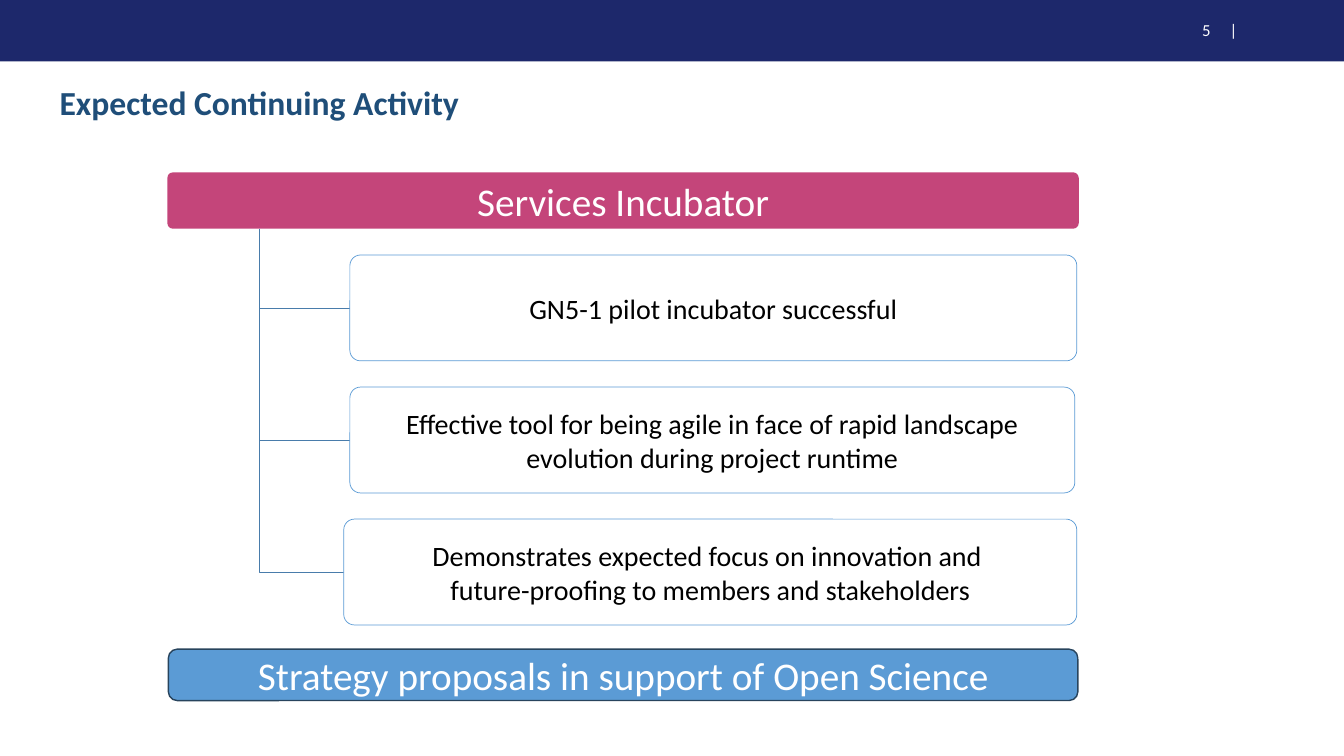
from lxml import etree
from pptx import Presentation
from pptx.dml.color import RGBColor
from pptx.enum import shapes, text
from pptx.oxml import ns
from pptx.util import Inches, Pt

NAVY = RGBColor(0x1D, 0x28, 0x6B)
TITLE_BLUE = RGBColor(0x1F, 0x4E, 0x79)
PINK = RGBColor(0xC4, 0x45, 0x7A)
BLUE = RGBColor(0x5B, 0x9B, 0xD5)
BRANCH_BLUE = RGBColor(0x49, 0x7C, 0xAB)
DARK_BLUE = RGBColor(0x28, 0x44, 0x5D)
WHITE = RGBColor(0xFF, 0xFF, 0xFF)
BLACK = RGBColor(0, 0, 0)

TRUNK_X, TRUNK_TOP = 2.57, 2.27
CARD_TOP, CARD_HEIGHT, CARD_STEP = 2.53, 1.05, 1.31
CARDS = [
    (3.47, 7.21, ["GN5-1 pilot incubator successful"]),
    (3.47, 7.19, ["Effective tool for being agile in face of rapid landscape "
                  "evolution during project runtime"]),
    (3.41, 7.27, ["Demonstrates expected focus on innovation and ",
                  "future-proofing to members and stakeholders"]),
]


def add_run(p, words, size, color, bold=False):
    r = p.add_run()
    r.text = words
    r.font.name = "Calibri"
    r.font.size = Pt(size)
    r.font.bold = bold
    r.font.color.rgb = color
    return r


def set_line(sp, color, width):
    sp.line.color.rgb = color
    sp.line.width = Pt(width)


def add_box(s, kind, left, top, width, height, fill, line=None):
    sp = s.shapes.add_shape(kind, Inches(left), Inches(top),
                            Inches(width), Inches(height))
    sp.shadow.inherit = False
    sp.fill.solid()
    sp.fill.fore_color.rgb = fill
    if line:
        set_line(sp, *line)
    else:
        sp.line.fill.background()
    return sp


def add_label_box(s, at, lines, size, color, fill, line=None, corner=0.1,
                  inset=0.06):
    sp = add_box(s, shapes.MSO_SHAPE.ROUNDED_RECTANGLE, *at, fill, line)
    sp.adjustments[0] = corner
    tf = sp.text_frame
    tf.word_wrap = True
    tf.vertical_anchor = text.MSO_ANCHOR.MIDDLE
    tf.margin_left = tf.margin_right = Inches(inset)
    tf.margin_top = tf.margin_bottom = Inches(0.03)
    p = tf.paragraphs[0]
    p.alignment = text.PP_ALIGN.CENTER
    for i, words in enumerate(lines):
        if i:
            p.add_line_break()
        add_run(p, words, size, color)
    return sp


def set_alpha(sp, percent):
    for clr in sp.fill._xPr.iterfind(".//" + ns.qn("a:solidFill") + "/" + ns.qn("a:srgbClr")):
        if clr.getparent().getparent() is sp.fill._xPr:
            etree.SubElement(clr, ns.qn("a:alpha"), val=str(percent * 1000))


def add_branch(s, card_left, card_middle):
    fb = s.shapes.build_freeform(Inches(TRUNK_X), Inches(TRUNK_TOP))
    fb.add_line_segments([(Inches(TRUNK_X), Inches(card_middle)),
                          (Inches(card_left), Inches(card_middle))], close=False)
    sp = fb.convert_to_shape()
    sp.shadow.inherit = False
    sp.fill.background()
    set_line(sp, BRANCH_BLUE, 0.5)


def add_header(s):
    add_box(s, shapes.MSO_SHAPE.RECTANGLE, 0, -0.04, 13.33, 0.65, NAVY)
    sp = s.shapes.add_textbox(Inches(11.64), Inches(0.12), Inches(0.73), Inches(0.36))
    tf = sp.text_frame
    tf.word_wrap = True
    tf.vertical_anchor = text.MSO_ANCHOR.MIDDLE
    p = tf.paragraphs[0]
    p.alignment = text.PP_ALIGN.RIGHT
    add_run(p, "5", 12, WHITE)
    gap = add_run(p, " ", 12, WHITE)
    gap.font._element.set("spc", "1080")
    add_run(p, "|", 12, WHITE)


def add_title(s, words):
    sp = s.shapes.title
    sp.left, sp.top, sp.width, sp.height = map(Inches, (0.49, 0.8, 10.82, 0.47))
    tf = sp.text_frame
    tf.word_wrap = True
    tf.vertical_anchor = text.MSO_ANCHOR.MIDDLE
    p = tf.paragraphs[0]
    p.alignment = text.PP_ALIGN.LEFT
    p.line_spacing = 0.9
    add_run(p, words, 24, TITLE_BLUE, bold=True)


def main():
    prs = Presentation()
    prs.slide_width, prs.slide_height = Inches(13.33), Inches(7.5)
    s = prs.slides.add_slide(prs.slide_layouts[5])
    add_header(s)
    add_title(s, "Expected Continuing Activity")
    add_label_box(s, (1.66, 1.71, 9.04, 0.56), ["Services Incubator"],
                  28, WHITE, PINK)
    for i, (left, width, lines) in enumerate(CARDS):
        top = CARD_TOP + i * CARD_STEP
        add_branch(s, left, top + CARD_HEIGHT / 2)
        card = add_label_box(s, (left, top, width, CARD_HEIGHT), lines,
                             20, BLACK, WHITE, (BLUE, 0.5))
        set_alpha(card, 90)
    add_label_box(s, (1.67, 6.44, 9.02, 0.51),
                  ["Strategy proposals in support of Open Science"],
                  28, WHITE, BLUE, (DARK_BLUE, 1), corner=0.17, inset=0.1)
    prs.save("out.pptx")


if __name__ == "__main__":
    main()
